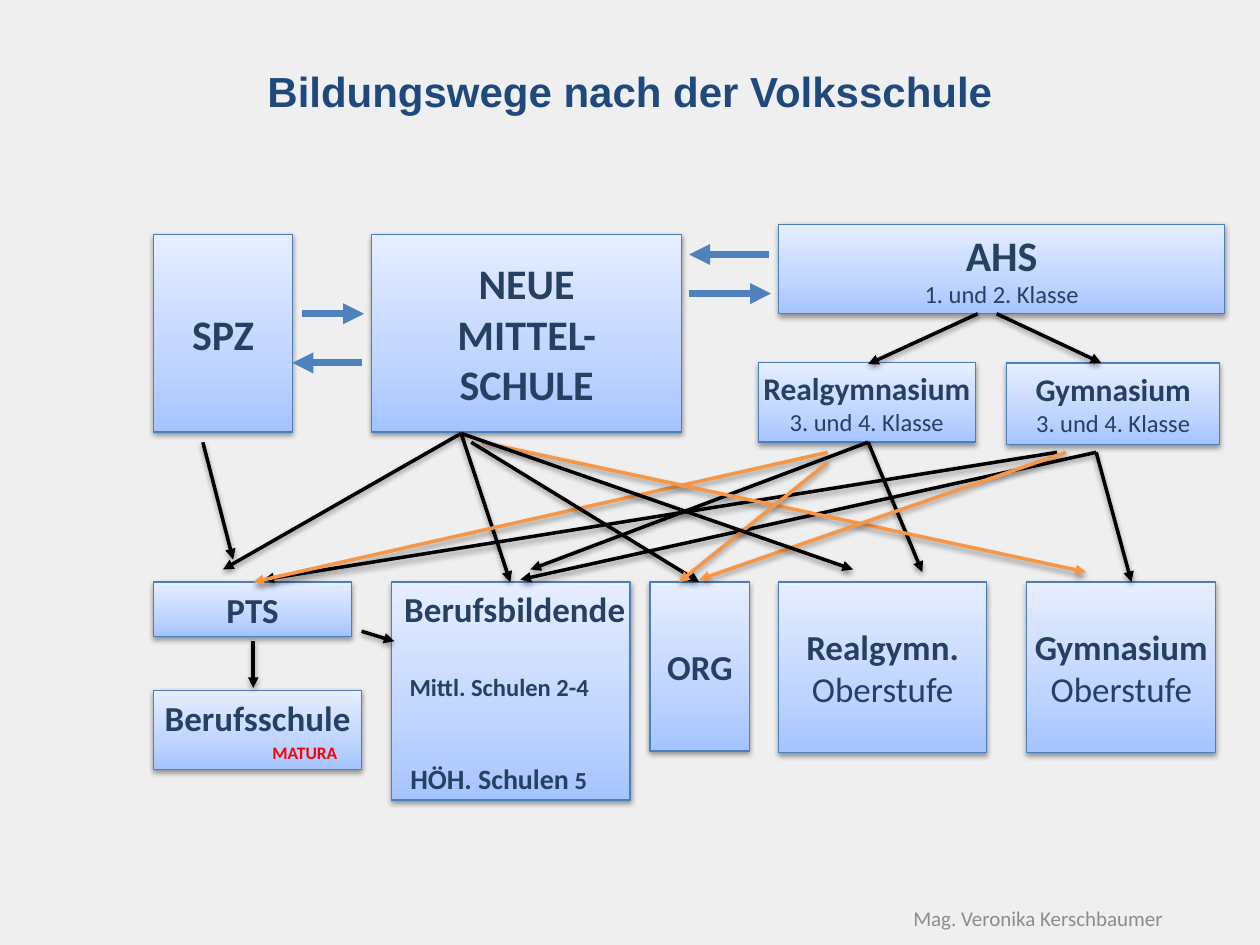
"""Draw the paths through the Austrian school system after primary school."""
import copy
from typing import NamedTuple

import lxml.etree
import pptx
import pptx.dml.color
import pptx.enum.shapes
import pptx.enum.text
import pptx.oxml.ns
import pptx.util

CELL = 0.1
NAVY, BLACK, ORANGE, BLUE = "254061", "000000", "F79646", "4F81BD"
GRADIENT = ((0, "A4C4FF"), (0.35, "BFD4FF"), (1, "E6EEFF"))
ALIGN = pptx.enum.text.PP_ALIGN
qn = pptx.oxml.ns.qn


class Run(NamedTuple):
    text: str
    size: float
    bold: bool = True
    color: str = NAVY
    font: str = "Calibri"


class Para(NamedTuple):
    runs: tuple[Run, ...]
    align: ALIGN = ALIGN.CENTER
    before: float = 0
    indent: float = 0


class Box(NamedTuple):
    col: float
    row: float
    cols: float
    rows: float
    paras: tuple[Para, ...]


class Arrow(NamedTuple):
    col1: float
    row1: float
    col2: float
    row2: float
    color: str = BLACK


def grid(cells: float) -> int:
    """Turn grid cells into a length."""
    return pptx.util.Inches(cells * CELL)


def rgb(color: str) -> pptx.dml.color.RGBColor:
    """Turn a hex string into a colour."""
    return pptx.dml.color.RGBColor.from_string(color)


def line(text: str, size: float, bold: bool = True) -> Para:
    """Make a centred paragraph of one run."""
    return Para((Run(text, size, bold),))


def school(name: str, size: float, note: str, note_size: float) -> tuple[Para, ...]:
    """Make a bold school name with a plain note below."""
    return line(name, size), line(note, note_size, False)


def write(tf, paras: tuple[Para, ...]) -> None:
    """Fill a text frame paragraph by paragraph."""
    tf.vertical_anchor = pptx.enum.text.MSO_ANCHOR.MIDDLE
    for i, para in enumerate(paras):
        p = tf.add_paragraph() if i else tf.paragraphs[0]
        p.alignment = para.align
        p.space_before = pptx.util.Pt(para.before)
        if para.indent:
            p._p.get_or_add_pPr().set("marL", str(pptx.util.Pt(para.indent)))
        for run in para.runs:
            r = p.add_run()
            r.text = run.text
            r.font.name, r.font.size = run.font, pptx.util.Pt(run.size)
            r.font.bold, r.font.color.rgb = run.bold, rgb(run.color)


def cast_shadow(effects) -> None:
    """Add a soft shadow below to an effect list."""
    shadow = lxml.etree.SubElement(effects, qn("a:outerShdw"), blurRad="40000",
                                   dist="20000", dir="5400000", rotWithShape="0")
    color = lxml.etree.SubElement(shadow, qn("a:srgbClr"), val=BLACK)
    lxml.etree.SubElement(color, qn("a:alpha"), val="38000")


def draw_box(s, box: Box) -> None:
    """Draw a school as a shaded rectangle."""
    sp = s.shapes.add_shape(pptx.enum.shapes.MSO_SHAPE.RECTANGLE,
                            *map(grid, box[:4]))
    sp.fill.gradient()
    sp.fill.gradient_angle = 90
    stops = sp._element.spPr.find(".//" + qn("a:gsLst"))
    stops.append(copy.deepcopy(stops[0]))
    for stop, (position, color) in zip(sp.fill.gradient_stops, GRADIENT):
        stop.position, stop.color.rgb = position, rgb(color)
    sp.line.color.rgb, sp.line.width = rgb("4B7EBC"), pptx.util.Pt(0.75)
    sp.shadow.inherit = False
    cast_shadow(sp._element.spPr.find(qn("a:effectLst")))
    sp.text_frame.word_wrap = False
    write(sp.text_frame, box.paras)


def draw_arrow(s, arrow: Arrow) -> None:
    """Draw a straight arrow; the blue ones are thick and flat."""
    c = s.shapes.add_connector(pptx.enum.shapes.MSO_CONNECTOR.STRAIGHT,
                               *map(grid, arrow[:4]))
    thick = arrow.color == BLUE
    c.line.color.rgb = rgb(arrow.color)
    c.line.width = pptx.util.Pt(4 if thick else 2)
    sp_pr = c._element.spPr
    lxml.etree.SubElement(sp_pr.find(qn("a:ln")), qn("a:tailEnd"), type="triangle")
    effects = lxml.etree.SubElement(sp_pr, qn("a:effectLst"))
    if not thick:
        cast_shadow(effects)


def draw_text(s, box: Box) -> None:
    """Draw a plain text box."""
    tf = s.shapes.add_textbox(*map(grid, box[:4])).text_frame
    tf.word_wrap = True
    write(tf, box.paras)


LEFT, UPPER, MIDDLE, LOWER = 12.2, 18.6, 28.8, 46.2
VOCATIONAL = (
    Para((Run("Berufsbildende", 20),), ALIGN.LEFT),
    Para((Run("Mittl. Schulen 2-4", 14),), ALIGN.LEFT, 24.4, 3),
    Para((Run("HÖH. Schulen", 16), Run(" 5", 14)), ALIGN.LEFT, 34.2, 3.5),
)
TEXTS = (
    Box(0, 3, 100, 8.4, (Para((Run("Bildungswege nach der Volksschule", 24,
                                  True, "1F497D", "Arial"),)),)),
    Box(6.7, 71.4, 86.6, 3, (Para((Run("Mag. Veronika Kerschbaumer", 12,
                                      False, "8C8C8C"),), ALIGN.RIGHT),)),
)
BOXES = (
    Box(LEFT, UPPER, 11, 15.7, (line("SPZ", 24),)),
    Box(29.5, UPPER, 24.6, 15.7,
        tuple(line(word, 24) for word in ("NEUE", "MITTEL-", "SCHULE"))),
    Box(61.8, 17.8, 35.4, 7.1, school("AHS", 24, "1. und 2. Klasse", 14)),
    Box(60.2, MIDDLE, 17.2, 6.3, school("Realgymnasium", 18, "3. und 4. Klasse", 14)),
    Box(79.9, MIDDLE, 16.9, 6.5, school("Gymnasium", 18, "3. und 4. Klasse", 14)),
    Box(LEFT, LOWER, 15.7, 4.3, (line("PTS", 20),)),
    Box(LEFT, 54.8, 16.5, 6.3, (line("Berufsschule", 20), Para(
        (Run("MATURA", 10, True, "FF0000"),), before=2, indent=54))),
    Box(31.1, LOWER, 18.9, 17.3, VOCATIONAL),
    Box(51.6, LOWER, 7.9, 13.4, (line("ORG", 20),)),
    Box(61.8, LOWER, 16.5, 13.5, school("Realgymn.", 20, "Oberstufe", 20)),
    Box(81.5, LOWER, 15, 13.5, school("Gymnasium", 20, "Oberstufe", 20)),
)
ARROWS = (
    Arrow(36.6, 34.4, 40.5, 46.2),
    Arrow(77.6, 24.9, 68.9, 28.9),
    Arrow(79.1, 24.9, 87.4, 28.8),
    Arrow(68.9, 35.1, 42.1, 45.2),
    Arrow(68.9, 35.1, 73.2, 45.4),
    Arrow(87, 35.9, 89.8, 46.2),
    Arrow(87, 35.9, 41.3, 46),
    Arrow(83.9, 35.9, 20.9, 46),
    Arrow(65.7, 35.9, 20.1, 46.2, ORANGE),
    Arrow(16.1, 35.1, 18.5, 44.4),
    Arrow(38.2, 35.1, 86.2, 45.4, ORANGE),
    Arrow(20.1, 50.9, 20.1, 54.6),
    Arrow(37.4, 35.1, 55.5, 46.2),
    Arrow(36.6, 34.4, 17.7, 45.2),
    Arrow(65.7, 36.7, 53.9, 46.2, ORANGE),
    Arrow(84.6, 35.9, 55.5, 46, ORANGE),
    Arrow(54.7, 23.3, 61.2, 23.3, BLUE),
    Arrow(61, 20.2, 54.7, 20.2, BLUE),
    Arrow(36.6, 34.4, 67.7, 45.2),
    Arrow(28.7, 28.8, 23.2, 28.8, BLUE),
    Arrow(24, 24.9, 28.9, 24.9, BLUE),
    Arrow(28.7, 50.1, 31.3, 50.9),
)


def main() -> None:
    """Build and save the slide."""
    prs = pptx.Presentation()
    prs.slide_width, prs.slide_height = grid(100), grid(75)
    s = prs.slides.add_slide(prs.slide_layouts[6])
    s.background.fill.solid()
    s.background.fill.fore_color.rgb = rgb("EFEFEF")
    for draw, items in ((draw_text, TEXTS), (draw_box, BOXES), (draw_arrow, ARROWS)):
        for item in items:
            draw(s, item)
    prs.save("out.pptx")


if __name__ == "__main__":
    main()
